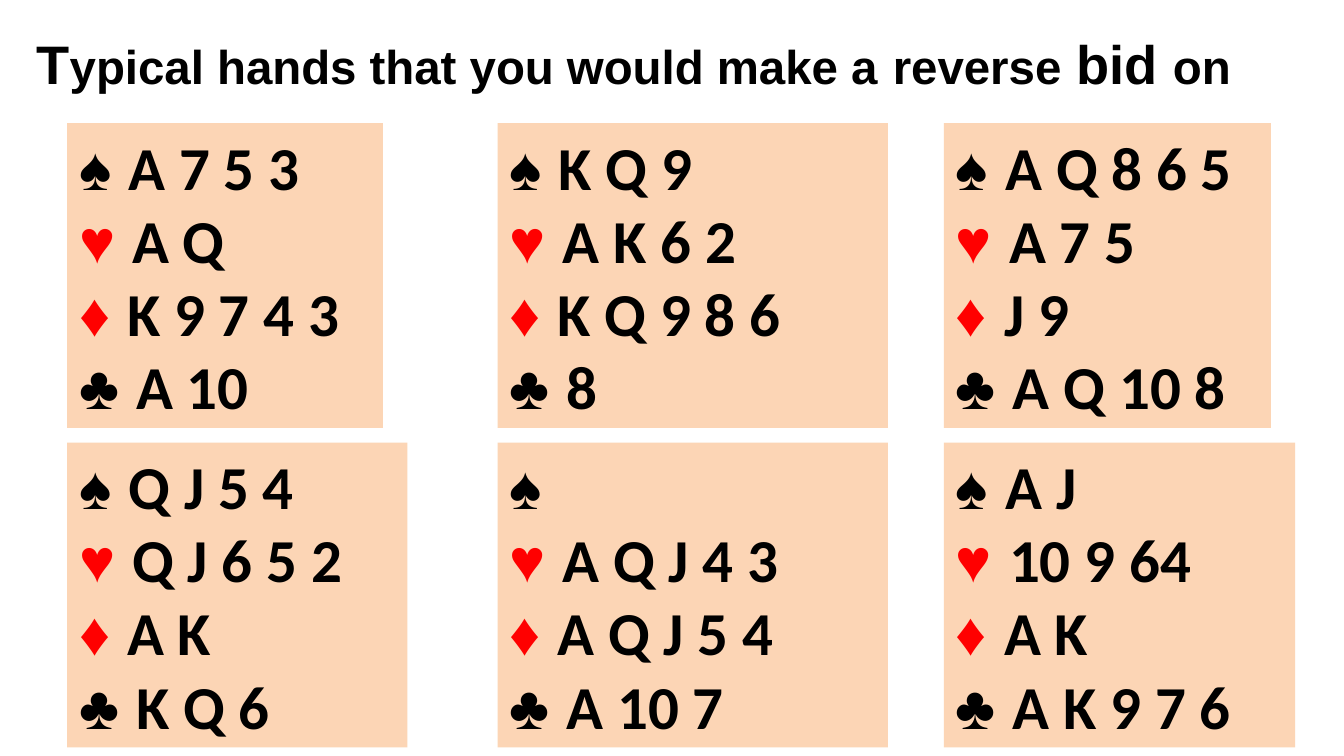
import pptx
import pptx.util
import pptx.dml.color
import pptx.enum.shapes
import pptx.enum.text

Inches = pptx.util.Inches

COLORS = {"black": "000000", "red": "FF0000", "peach": "FCD5B5"}
SUITS = [("♠", "black"), ("♥", "red"), ("♦", "red"), ("♣", "black")]

TITLE_RUNS = [
    ("T", 32), ("ypical hands that you would make a", 28), (" ", 32),
    ("reverse", 28), (" bid ", 32), ("on", 28),
]

COLUMN_LEFTS = [0.55, 4.08, 7.74]
ROW_TOPS = [1.01, 3.63]
HAND_HEIGHT = 2.5

# Each hand: box width, then the cards in spades, hearts, diamonds and clubs.
HANDS = [
    [
        (2.59, ["A 7 5 3", "A Q", "K 9 7 4 3", "A 10"]),
        (3.2, ["K Q 9", "A K 6 2", "K Q 9 8 6", "8"]),
        (2.68, ["A Q 8 6 5", "A 7 5", "J 9", "A Q 10 8"]),
    ],
    [
        (2.79, ["Q J 5 4", "Q J 6 5 2", "A K", "K Q 6"]),
        (3.2, ["", "A Q J 4 3", "A Q J 5 4", "A 10 7"]),
        (2.88, ["A J", "10 9 64", "A K", "A K 9 7 6"]),
    ],
]


class Deck:
    """Holds the text style and the current slide."""

    suit_font = "Arial"
    card_font = "Calibri"
    card_size = 36

    def __init__(self, prs):
        self.slide = prs.slides.add_slide(prs.slide_layouts[5])

    def color(self, name):
        return pptx.dml.color.RGBColor.from_string(COLORS[name])

    def run(self, p, text, font, size, color="black"):
        r = p.add_run()
        r.text = text
        r.font.name = font
        r.font.size = pptx.util.Pt(size)
        r.font.bold = True
        r.font.color.rgb = self.color(color)

    def frame(self, sp):
        """Set top-left wrapped text that the shape grows to fit."""
        tf = sp.text_frame
        tf.word_wrap = True
        tf.auto_size = pptx.enum.text.MSO_AUTO_SIZE.SHAPE_TO_FIT_TEXT
        tf.vertical_anchor = pptx.enum.text.MSO_ANCHOR.TOP
        tf.margin_left = tf.margin_right = Inches(0.1)
        tf.margin_top = tf.margin_bottom = Inches(0.05)
        return tf

    def title(self, runs, left, top, width, height):
        sp = self.slide.shapes.title
        sp.left, sp.top = Inches(left), Inches(top)
        sp.width, sp.height = Inches(width), Inches(height)
        p = self.frame(sp).paragraphs[0]
        p.alignment = pptx.enum.text.PP_ALIGN.LEFT
        for text, size in runs:
            self.run(p, text, self.suit_font, size)

    def hand(self, holdings, left, top, width, height):
        sp = self.slide.shapes.add_shape(
            pptx.enum.shapes.MSO_SHAPE.RECTANGLE,
            Inches(left), Inches(top), Inches(width), Inches(height))
        sp.shadow.inherit = False
        sp.fill.solid()
        sp.fill.fore_color.rgb = self.color("peach")
        sp.line.fill.background()
        tf = self.frame(sp)
        for i, ((suit, color), cards) in enumerate(zip(SUITS, holdings)):
            p = tf.add_paragraph() if i else tf.paragraphs[0]
            p.alignment = pptx.enum.text.PP_ALIGN.LEFT
            symbol = f"{suit} " if cards else suit
            self.run(p, symbol, self.suit_font, self.card_size, color)
            if cards:
                self.run(p, cards, self.card_font, self.card_size)


def main():
    prs = pptx.Presentation()
    prs.slide_width, prs.slide_height = Inches(11.02), Inches(6.2)
    deck = Deck(prs)
    deck.title(TITLE_RUNS, 0.2, 0.2, 10.03, 0.63)
    for top, row in zip(ROW_TOPS, HANDS):
        for left, (width, holdings) in zip(COLUMN_LEFTS, row):
            deck.hand(holdings, left, top, width, HAND_HEIGHT)
    prs.save("out.pptx")


if __name__ == "__main__":
    main()
